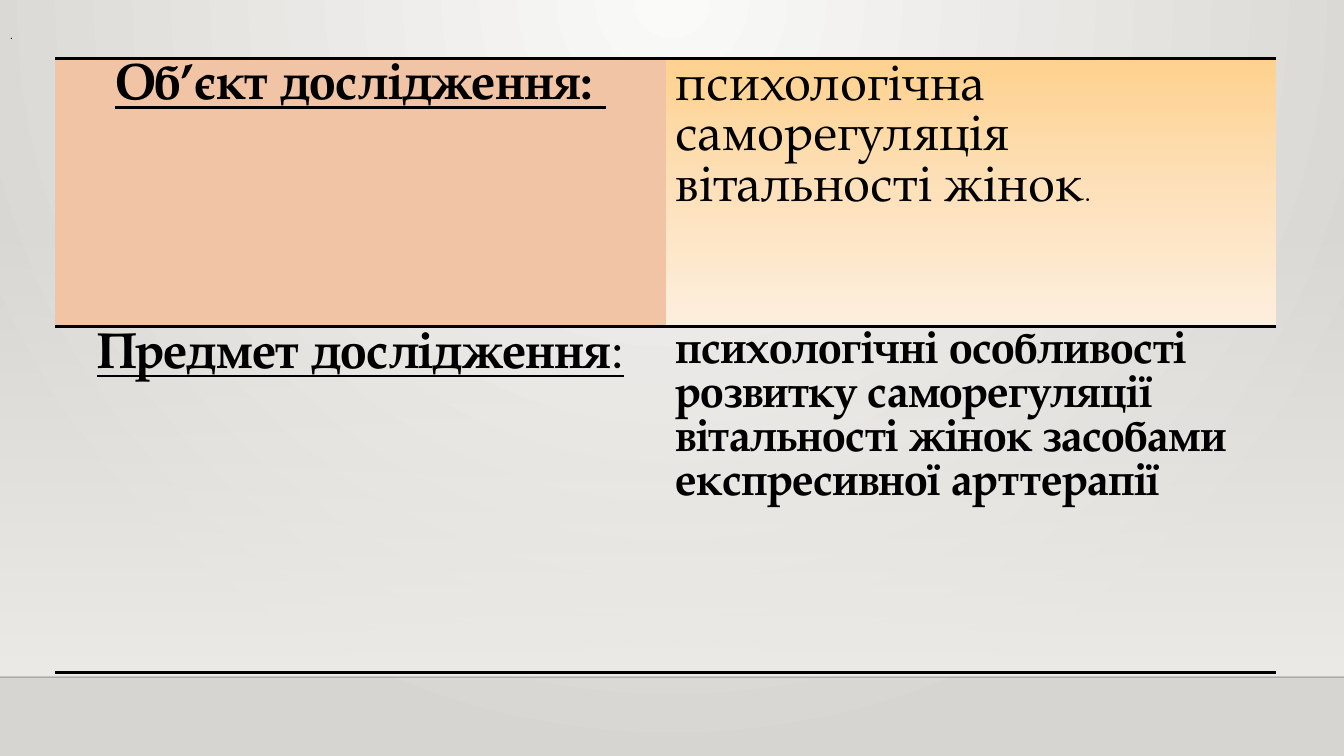
from lxml.etree import SubElement
from pptx import Presentation
from pptx.dml.color import RGBColor
from pptx.enum.shapes import MSO_CONNECTOR, MSO_SHAPE
from pptx.enum.text import MSO_ANCHOR, PP_ALIGN
from pptx.oxml import parse_xml
from pptx.oxml.ns import nsdecls, qn
from pptx.util import Pt

BLACK = RGBColor(0x00, 0x00, 0x00)
PEACH = RGBColor(0xF0, 0xC4, 0xA4)
APRICOT = RGBColor(0xFE, 0xD1, 0x8E)
LIGHT_APRICOT = RGBColor(0xFD, 0xE1, 0xBB)
PALE_APRICOT = RGBColor(0xFD, 0xEF, 0xDE)
WHITE_GREY = RGBColor(0xFA, 0xFA, 0xF9)
WARM_GREY = RGBColor(0xD7, 0xD5, 0xD2)
WALL_GREY = RGBColor(0xED, 0xEB, 0xE7)

WIDTH, HEIGHT = 960, 540
DOWNWARD = '<a:lin ang="5400000" scaled="0"/>'
FROM_TOP = ('<a:path path="circle">'
            '<a:fillToRect l="43000" t="0" r="43000" b="100000"/></a:path>')


class ResearchSlide:
    """Holds the text style and the slide, and adds each kind of element."""

    def __init__(self, presentation, font):
        self.font = font
        self.slide = presentation.slides.add_slide(presentation.slide_layouts[5])

    def gradient(self, fill, owner, stops, direction):
        fill.gradient()
        marks = "".join(
            f'<a:gs pos="{position * 1000}"><a:srgbClr val="{color}">'
            f'<a:alpha val="{opacity * 1000}"/></a:srgbClr></a:gs>'
            for position, color, opacity in stops)
        element = next(owner.iter(qn("a:gradFill")))
        element.getparent().replace(element, parse_xml(
            f'<a:gradFill {nsdecls("a")} rotWithShape="1">'
            f'<a:gsLst>{marks}</a:gsLst>{direction}</a:gradFill>'))

    def background(self, stops):
        self.gradient(self.slide.background.fill, self.slide.element, stops, FROM_TOP)

    def band(self, top, height, stops):
        shape = self.slide.shapes.add_shape(
            MSO_SHAPE.RECTANGLE, 0, Pt(top), Pt(WIDTH), Pt(height))
        shape.shadow.inherit = False
        shape.line.fill.background()
        self.gradient(shape.fill, shape.element, stops, DOWNWARD)

    def rule(self, top, color, width, opacity):
        connector = self.slide.shapes.add_connector(
            MSO_CONNECTOR.STRAIGHT, 0, Pt(top), Pt(WIDTH), Pt(top))
        connector.line.color.rgb = color
        connector.line.width = Pt(width)
        color_element = next(connector.element.spPr.iter(qn("a:srgbClr")))
        SubElement(color_element, qn("a:alpha")).set("val", str(opacity * 1000))
        SubElement(connector.element.spPr, qn("a:effectLst"))

    def add_runs(self, paragraph, runs, alignment):
        paragraph.alignment = alignment
        for text, size, bold, underline in runs:
            run = paragraph.add_run()
            run.text = text
            run.font.name = self.font
            run.font.size = Pt(size)
            run.font.bold = bold
            run.font.underline = underline
            run.font.color.rgb = BLACK

    def title(self, left, top, width, height, runs):
        shape = self.slide.shapes.title
        shape.left, shape.top = Pt(left), Pt(top)
        shape.width, shape.height = Pt(width), Pt(height)
        frame = shape.text_frame
        frame.word_wrap = True
        frame.vertical_anchor = MSO_ANCHOR.BOTTOM
        frame.paragraphs[0].line_spacing = 0.9
        self.add_runs(frame.paragraphs[0], runs, PP_ALIGN.LEFT)

    def border(self, cell, side, width):
        cell._tc.get_or_add_tcPr().insert(0, parse_xml(
            f'<a:{side} {nsdecls("a")} w="{Pt(width)}"><a:solidFill>'
            f'<a:srgbClr val="{BLACK}"/></a:solidFill></a:{side}>'))

    def table(self, left, top, column_width, row_heights, rows):
        frame = self.slide.shapes.add_table(
            len(rows), len(rows[0]), Pt(left), Pt(top),
            Pt(column_width * len(rows[0])), Pt(sum(row_heights)))
        table = frame.table
        table.first_row = table.horz_banding = False
        for column in table.columns:
            column.width = Pt(column_width)
        for row_index, (height, row) in enumerate(zip(row_heights, rows)):
            table.rows[row_index].height = Pt(height)
            for column_index, (runs, alignment, fill) in enumerate(row):
                cell = table.cell(row_index, column_index)
                self.add_runs(cell.text_frame.paragraphs[0], runs, alignment)
                if fill is None:
                    cell.fill.background()
                elif isinstance(fill, RGBColor):
                    cell.fill.solid()
                    cell.fill.fore_color.rgb = fill
                else:
                    self.gradient(cell.fill, cell._tc, fill, DOWNWARD)
                for side in ("lnB", "lnT"):
                    self.border(cell, side, 2)
                for side in ("lnR", "lnL"):
                    cell._tc.tcPr.insert(0, parse_xml(
                        f'<a:{side} {nsdecls("a")} w="0"><a:noFill/></a:{side}>'))


def main():
    presentation = Presentation()
    presentation.slide_width, presentation.slide_height = Pt(WIDTH), Pt(HEIGHT)
    research = ResearchSlide(presentation, "TeX Gyre Pagella")
    research.background([(0, WHITE_GREY, 100), (100, WARM_GREY, 100)])
    research.band(158.4, 324, [(0, WALL_GREY, 0), (100, WALL_GREY, 100)])
    research.rule(483.8, BLACK, 1, 20)
    research.title(0, 0, 698.4, 33.8, [(".", 8, False, False)])
    apricot_fade = [(0, APRICOT, 100), (50, LIGHT_APRICOT, 100),
                    (100, PALE_APRICOT, 100)]
    research.table(39.4, 41.8, 436.2, (191.5, 247), [
        [([("Об’єкт дослідження: ", 36, True, True)], PP_ALIGN.CENTER, PEACH),
         ([("психологічна саморегуляція вітальності жінок", 36, False, False),
           (".", 18, False, False)], PP_ALIGN.LEFT, apricot_fade)],
        [([("Предмет дослідження", 36, True, True), (":", 36, False, True)],
          PP_ALIGN.CENTER, None),
         ([("психологічні особливості розвитку саморегуляції вітальності жінок "
            "засобами експресивної арттерапії", 32, True, False)],
          PP_ALIGN.LEFT, None)]])
    presentation.save("out.pptx")


if __name__ == "__main__":
    main()
